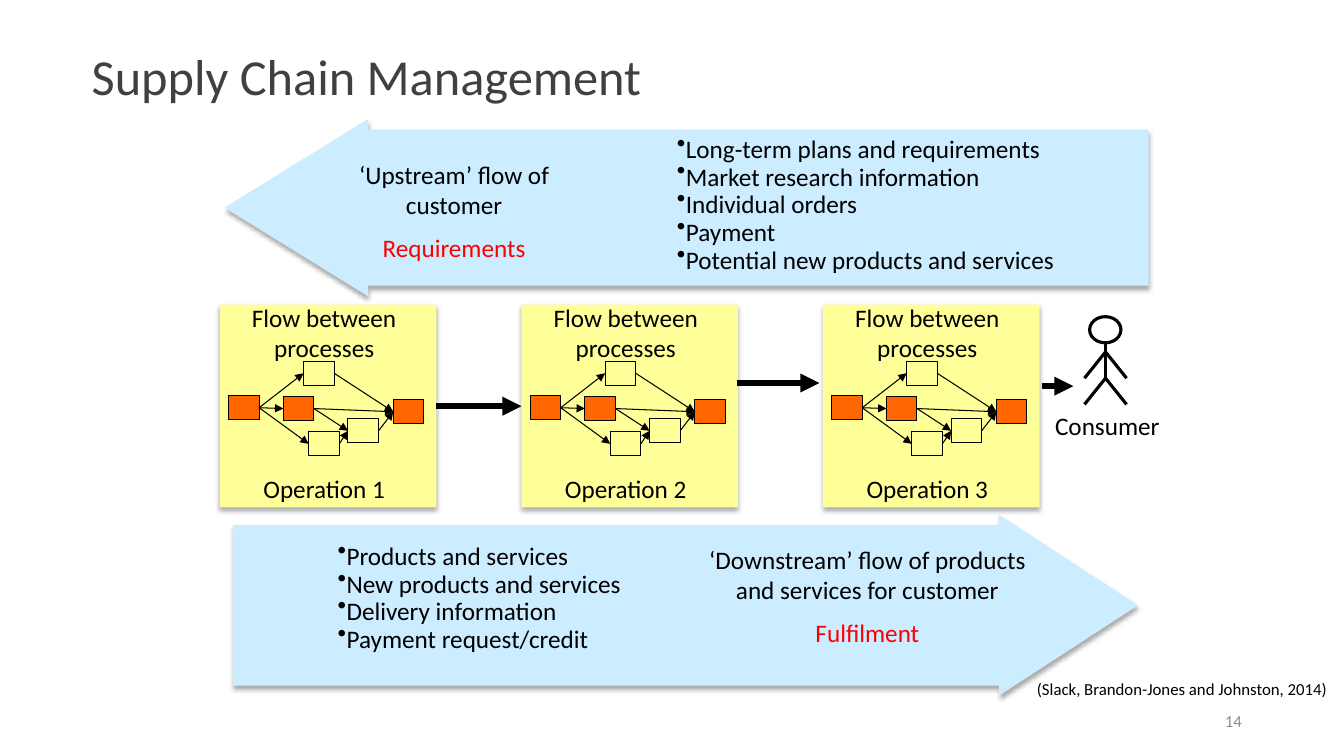
from lxml.etree import SubElement
from pptx import Presentation
from pptx.dml.color import RGBColor
from pptx.enum.shapes import MSO_CONNECTOR as Link, MSO_SHAPE as Preset
from pptx.enum.text import MSO_ANCHOR as Anchor, PP_ALIGN as Align
from pptx.oxml.ns import qn
from pptx.util import Cm, Pt

BLACK, RED, BLUE, YELLOW, ORANGE = "000000", "FF0000", "CCECFF", "FFFF99", "FF6600"
NODE_WIDTH, NODE_HEIGHT = 0.77, 0.61
NODES = {
    "start": (0.22, 2.29, ORANGE),
    "end": (4.37, 2.39, ORANGE),
    "lower": (2.24, 3.2, None),
    "right": (3.23, 2.87, None),
    "top": (2.11, 1.42, None),
    "middle": (1.6, 2.31, ORANGE),
}
FLOWS = [
    ("start", "top"), ("start", "middle"), ("start", "lower"), ("middle", "end"),
    ("middle", "right"), ("top", "end"), ("lower", "right"), ("right", "end"),
]


def color(value):
    """Return the colour for a hex string."""
    return RGBColor.from_string(value)


def within(box, left, top, width, height):
    """Return a box whose offsets are measured from another box."""
    return box[0] + left, box[1] + top, width, height


def add_text(page, box, lines, size=18, ink=BLACK, anchor=Anchor.TOP, bullets=False, **formats):
    """Write lines as paragraphs; a line may be a pair of text and colour."""
    frame = page.shapes.add_textbox(*map(Cm, box)).text_frame
    frame.word_wrap, frame.vertical_anchor = True, anchor
    for index, line in enumerate(lines):
        text, shade = line if isinstance(line, tuple) else (line, ink)
        para = frame.paragraphs[0] if index == 0 else frame.add_paragraph()
        for name, value in formats.items():
            setattr(para, name, value)
        para.space_before = Pt(size / 2 if index else 0)
        if bullets:
            SubElement(para._p.get_or_add_pPr(), qn("a:buChar"), char="•")
        span = para.add_run()
        span.text = text
        for name, value in {"name": "Calibri", "size": Pt(size)}.items():
            setattr(span.font, name, value)
        span.font.color.rgb = color(shade)


def add_preset(page, preset, box, fill=None, line_width=None, shadow=False):
    """Add a preset shape with optional fill, black outline and soft shadow."""
    shape = page.shapes.add_shape(preset, *map(Cm, box))
    shape.shadow.inherit = False
    if fill:
        shape.fill.solid()
        shape.fill.fore_color.rgb = color(fill)
    else:
        shape.fill.background()
    if line_width:
        shape.line.width = Pt(line_width)
        shape.line.color.rgb = color(BLACK)
    else:
        shape.line.fill.background()
    if shadow:
        effects = shape.element.spPr.find(qn("a:effectLst"))
        outer = SubElement(effects, qn("a:outerShdw"), blurRad=str(Pt(3.5)),
                           dist=str(Pt(2.2)), dir="5400000", rotWithShape="0")
        shade = SubElement(outer, qn("a:srgbClr"), val=BLACK)
        SubElement(shade, qn("a:alpha"), val="32000")
    return shape


def add_line(page, start=(0, 0), end=(0, 0), width=0.75, arrow=False):
    """Add a straight black line, with an arrowhead at its end if asked."""
    line = page.shapes.add_connector(Link.STRAIGHT, *map(Cm, start + end))
    line.line.width = Pt(width)
    line.line.color.rgb = color(BLACK)
    if arrow:
        SubElement(line.line._get_or_add_ln(), qn("a:tailEnd"), type="triangle")
    SubElement(line.element.spPr, qn("a:effectLst"))
    return line


def join(page, source, target, width=0.75):
    """Draw an arrow from the right side of one shape to the left of another."""
    line = add_line(page, width=width, arrow=True)
    line.begin_connect(source, 3)
    line.end_connect(target, 1)


def draw_heading(page, box):
    """Draw the slide title."""
    add_text(page, box, ["Supply Chain Management"], size=36, ink="404041",
             anchor=Anchor.MIDDLE, line_spacing=0.9)


def draw_stream(page, box, preset, adjustments, caption_box, caption, list_box, items):
    """Draw a block arrow with its caption and bulleted list."""
    arrow = add_preset(page, preset, box, BLUE, shadow=True)
    for index, value in enumerate(adjustments):
        arrow.adjustments[index] = value
    add_text(page, within(box, *caption_box), caption, alignment=Align.CENTER)
    add_text(page, within(box, *list_box), items, bullets=True, line_spacing=0.5)


def draw_operation(page, box, name):
    """Draw an operation panel with its process network and return the panel."""
    panel = add_preset(page, Preset.RECTANGLE, box, YELLOW, shadow=True)
    nodes = {
        key: add_preset(page, Preset.RECTANGLE,
                        within(box, left, top, NODE_WIDTH, NODE_HEIGHT), fill, 0.75)
        for key, (left, top, fill) in NODES.items()
    }
    for source, target in FLOWS:
        join(page, nodes[source], nodes[target])
    for text, top, width, height in [("Flow between processes", -0.18, 6, 1.8),
                                     (name, 4.12, 4.78, 1.02)]:
        left = (box[2] - width) / 2 - 0.1
        add_text(page, within(box, left, top, width, height), [text], alignment=Align.CENTER)
    return panel


def draw_consumer(page, box):
    """Draw the stick figure and its label."""
    left, top, width, _ = box
    center, reach = left + 1.52, 0.53
    shoulder, hip, foot = top + 0.89, top + 1.55, top + 2.21
    add_preset(page, Preset.OVAL, within(box, 1.12, 0, 0.79, 0.66), line_width=2.25)
    add_line(page, (center, top + 0.66), (center, hip), 2.25)
    for joint, tip in [(hip, foot), (shoulder, hip)]:
        for side in (-reach, reach):
            add_line(page, (center, joint), (center + side, tip), 2.25)
    add_text(page, within(box, 0, 2.24, width, 1.02), ["Consumer"])


def draw_chain(page, box):
    """Draw the three operations, the consumer and the arrows between them."""
    panels = [draw_operation(page, within(box, 7.6 * index, 0, 5.46, 5.11), f"Operation {index + 1}")
              for index in range(3)]
    join(page, panels[0], panels[1], 4.5)
    left, top = box[:2]
    for start, end, height in [(13.03, 15.11, 1.97), (20.72, 21.51, 2.05)]:
        add_line(page, (left + start, top + height), (left + end, top + height), 4.5, True)
    draw_consumer(page, within(box, 20.8, 0.3, 3.76, 3.25))


def draw_footer(page, box):
    """Draw the citation and the page number."""
    add_text(page, within(box, 0, 0, 16.94, 0.76), ["(Slack, Brandon-Jones and Johnston, 2014)"],
             size=12, alignment=Align.RIGHT)
    add_text(page, within(box, 7.17, 0.68, 7.62, 1.02), ["14"], size=12, ink="8C8C8C",
             anchor=Anchor.MIDDLE, alignment=Align.RIGHT)


def main():
    """Build and save the slide."""
    deck = Presentation()
    deck.slide_width, deck.slide_height = Cm(33.87), Cm(19.05)
    page = deck.slides.add_slide(deck.slide_layouts[6])
    draw_heading(page, (2.06, 0.18, 29.49, 3.63))
    draw_stream(page, (5.87, 12.98, 22.81, 4.55), Preset.RIGHT_ARROW, (0.89, 0.77),
                (11.48, 0.61, 9.02, 2.95),
                ["‘Downstream’ flow of products and services for customer", ("Fulfilment", RED)],
                (2.39, 0.84, 9.19, 3.02),
                ["Products and services", "New products and services",
                 "Delivery information", "Payment request/credit"])
    draw_stream(page, (5.66, 3, 23.29, 4.47), Preset.LEFT_ARROW, (0.88, 0.81),
                (2.57, 0.89, 6.43, 2.95),
                ["‘Upstream’ flow of customer", ("Requirements", RED)],
                (11.15, 0.56, 12.27, 3.81),
                ["Long-term plans and requirements", "Market research information",
                 "Individual orders", "Payment", "Potential new products and services"])
    draw_chain(page, (5.54, 7.68, 24.56, 5.11))
    draw_footer(page, (16.76, 16.97, 16.94, 1.7))
    deck.save("out.pptx")


if __name__ == "__main__":
    main()
